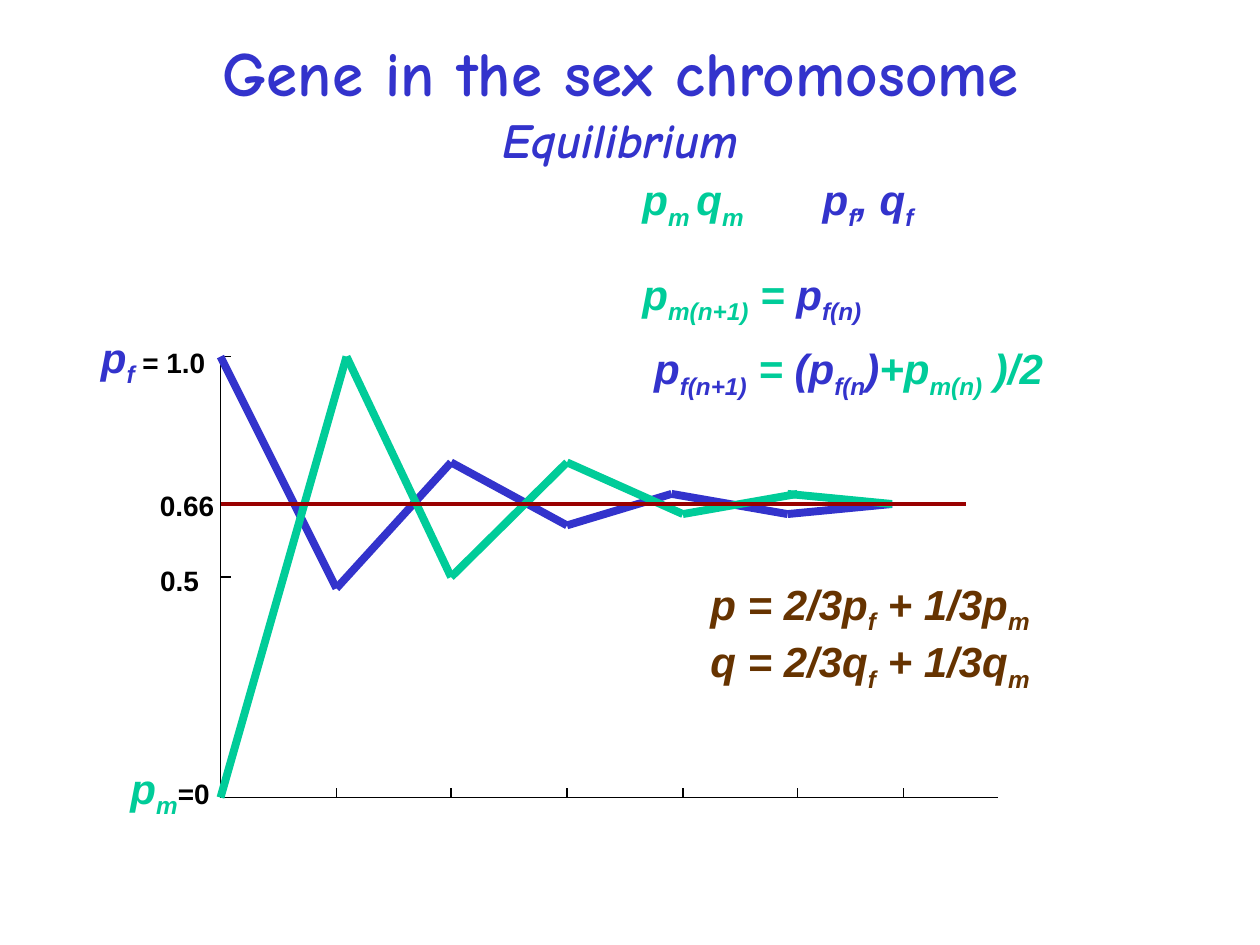
from itertools import pairwise

from lxml import etree
from pptx import Presentation
from pptx.dml.color import RGBColor
from pptx.enum import text as t
from pptx.oxml import ns
from pptx.util import Inches, Pt

BLUE = RGBColor(0x33, 0x33, 0xCC)
GREEN = RGBColor(0x00, 0xCC, 0x99)
BROWN = RGBColor(0x66, 0x33, 0x00)
RED = RGBColor(0x99, 0x00, 0x00)
BLACK = RGBColor(0, 0, 0)

ORIGIN_X, ORIGIN_Y, TOP_Y, AXIS_END = 1.75, 6.33, 2.83, 7.92
HALF_Y, EQUILIBRIUM_Y = 4.58, 4
TICK = 0.08
GENERATIONS = [2.67, 3.58, 4.5, 5.42, 6.33, 7.17]

FEMALE = [(ORIGIN_X, TOP_Y), (2.67, 4.67), (3.58, 3.67), (4.5, 4.17),
          (5.33, 3.92), (6.25, 4.08), (7.08, EQUILIBRIUM_Y)]
MALE = [(ORIGIN_X, ORIGIN_Y), (2.75, TOP_Y), (3.58, HALF_Y), (4.5, 3.67),
        (5.42, 4.08), (6.33, 3.92)]
MALE_END = [(6.25, 3.92), (7.08, EQUILIBRIUM_Y)]


def add_line(slide, start, end, color=BLACK, width=0.75):
    line = slide.shapes.add_connector(1, *map(Inches, (*start, *end)))
    line.line.color.rgb = color
    line.line.width = Pt(width)
    etree.SubElement(line._element.spPr, ns.qn("a:effectLst"))


def add_curve(slide, points, color):
    for start, end in pairwise(points):
        add_line(slide, start, end, color, 4.5)


def add_run(paragraph, words, size=24, color=BLACK, font="Arial", italic=True, sub=False):
    run = paragraph.add_run()
    run.text = words
    run.font.name = font
    run.font.size = Pt(size)
    run.font.bold = True
    run.font.italic = italic
    run.font.color.rgb = color
    if sub:
        run._r.get_or_add_rPr().set("baseline", "-25000")


def add_text(slide, box, *paragraphs, center=False, wrap=True, anchor=t.MSO_ANCHOR.TOP):
    frame = slide.shapes.add_textbox(*map(Inches, box)).text_frame
    frame.word_wrap = wrap
    frame.vertical_anchor = anchor
    for index, runs in enumerate(paragraphs):
        paragraph = frame.add_paragraph() if index else frame.paragraphs[0]
        paragraph.alignment = t.PP_ALIGN.CENTER if center else t.PP_ALIGN.LEFT
        for words, style in runs:
            add_run(paragraph, words, **style)


def symbols(color, *parts):
    return [(part, {"color": color, "sub": index % 2 == 1})
            for index, part in enumerate(parts)]


def plain(words):
    return [(words, {"size": 16, "italic": False})]


def add_axes(slide):
    add_line(slide, (ORIGIN_X, TOP_Y), (ORIGIN_X, ORIGIN_Y))
    add_line(slide, (ORIGIN_X, ORIGIN_Y), (AXIS_END, ORIGIN_Y))
    for y in (HALF_Y, TOP_Y):
        add_line(slide, (ORIGIN_X, y), (ORIGIN_X + TICK, y))
    for x in GENERATIONS:
        add_line(slide, (x, ORIGIN_Y), (x, ORIGIN_Y - TICK))


def add_axis_labels(slide):
    add_text(slide, (0.67, 2.58, 1.09, 0.5),
             symbols(BLUE, "p", "f") + plain(" = 1.0"), center=True)
    add_text(slide, (1.17, 3.83, 0.63, 0.37), plain("0.66"), center=True, wrap=False)
    add_text(slide, (1.17, 4.42, 0.51, 0.37), plain("0.5"), center=True, wrap=False)
    add_text(slide, (0.92, 6, 0.86, 0.5),
             symbols(GREEN, "p", "m") + plain("=0"), center=True)


def add_equations(slide):
    add_text(slide, (5, 1.33, 1.08, 0.5), symbols(GREEN, "p", "m ", "q", "m"))
    add_text(slide, (6.42, 1.33, 0.94, 0.5),
             symbols(BLUE, "p", "f", ", q", "f"), center=True)
    add_text(slide, (5, 2.08, 2.08, 0.5),
             symbols(GREEN, "p", "m(n+1)", " = ") + symbols(BLUE, "p", "f(n)"), wrap=False)
    add_text(slide, (5, 2.67, 3.47, 0.5),
             symbols(BLUE, "p", "f(n+1)") + symbols(GREEN, " = ")
             + symbols(BLUE, "(p", "f(n", ")") + symbols(GREEN, "+p", "m(n)", " )/2"),
             center=True, wrap=False)
    add_text(slide, (5.54, 4.54, 2.86, 0.9),
             *(symbols(BROWN, f"{x} = 2/3{x}", "f", f" + 1/3{x}", "m") for x in "pq"))


def main():
    deck = Presentation()
    deck.slide_width, deck.slide_height = Inches(10), Inches(7.5)
    slide = deck.slides.add_slide(deck.slide_layouts[6])
    heading = {"font": "Comic Neue", "color": BLUE}
    add_text(slide, (0.83, 0.21, 8.19, 1.18),
             [("Gene in the sex chromosome", {**heading, "size": 36, "italic": False})],
             [("Equilibrium", {**heading, "size": 28})],
             center=True, anchor=t.MSO_ANCHOR.MIDDLE)
    add_axes(slide)
    add_curve(slide, FEMALE, BLUE)
    add_curve(slide, MALE, GREEN)
    add_curve(slide, MALE_END, GREEN)
    add_line(slide, (ORIGIN_X, EQUILIBRIUM_Y), (7.67, EQUILIBRIUM_Y), RED, 2.25)
    add_axis_labels(slide)
    add_equations(slide)
    deck.save("out.pptx")


if __name__ == "__main__":
    main()
